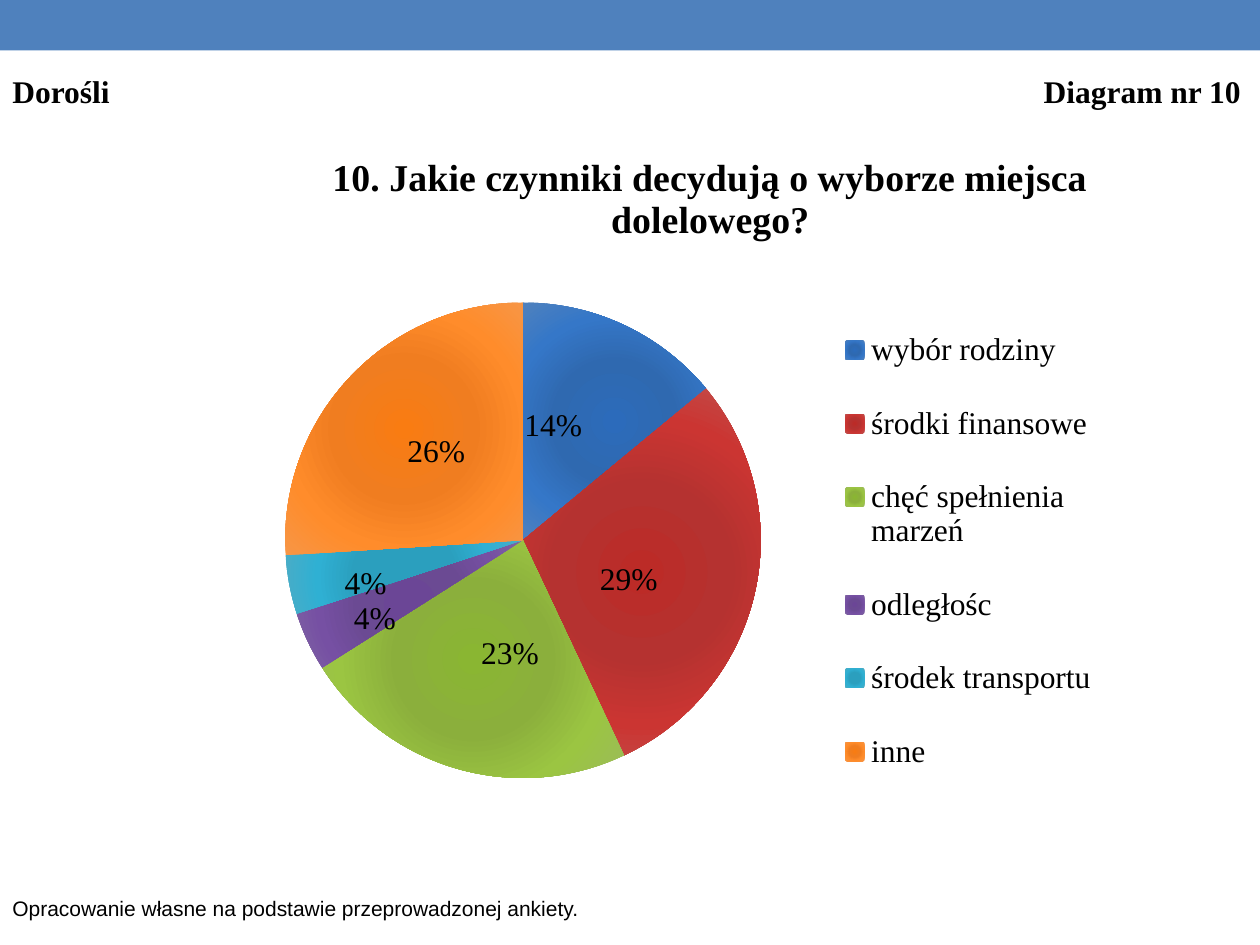
import pptx
import pptx.chart.data
import pptx.dml.color
import pptx.enum.chart
import pptx.enum.shapes
import pptx.oxml
import pptx.oxml.ns
import pptx.util
from pptx.util import Inches, Pt

SERIF, SANS = "Times New Roman", "Arial"
BAR_COLOR, TEXT_COLOR = "4F81BD", "000000"
HEADER = "Dorośli\tDiagram nr 10"
FOOTER = "Opracowanie własne na podstawie przeprowadzonej ankiety."
QUESTION = "10. Jakie czynniki decydują o wyborze miejsca dolelowego?"

# answer, percent, gradient from centre to rim, label shift (share of chart size)
ANSWERS = [
    ("wybór rodziny", 14, ("2C6BBB", "2F69B0", "3577C8", "4F81BD"), (-0.02, -0.01)),
    ("środki finansowe", 29, ("BC2B27", "B53230", "CB3532", "C0504D"), (-0.01, 0.02)),
    ("chęć spełnienia marzeń", 23, ("8AB632", "8BAF3C", "9BC542", "9BBB59"), (0.02, 0)),
    ("odległośc", 4, ("6B4696", "6B4A93", "7650A3", "8064A2"), (-0.04, 0.04)),
    ("środek transportu", 4, ("2AA0BE", "2B9FBE", "2FB0D3", "4BACC6"), (-0.04, 0.03)),
    ("inne", 26, ("F97C12", "F07D20", "FF8C2B", "F79646"), (0, -0.01)),
]
STOPS = (0, 40, 70, 100)
CHART_BOX = (1.3, 0.99, 8.03, 5.59)
PIE_BOX = (2.27, 2.37, 3.78, 3.78)
LEGEND_BOX = (6.6, 2.33, 2.2, 4.07)
TITLE_CORNER = (2.6, 1.16)


def color(code):
    return pptx.dml.color.RGBColor.from_string(code)


def set_font(font, name, size, bold=False):
    font.name, font.size, font.bold = name, Pt(size), bold
    font.color.rgb = color(TEXT_COLOR)


def add_text(slide, box, text, name, size, bold=False, right_tab=None):
    frame = slide.shapes.add_textbox(*map(Inches, box)).text_frame
    frame.word_wrap = True
    para = frame.paragraphs[0]
    para.text = text
    if right_tab:
        para._p.get_or_add_pPr().append(pptx.oxml.parse_xml(
            f'<a:tabLst {pptx.oxml.ns.nsdecls("a")}>'
            f'<a:tab pos="{Inches(right_tab)}" algn="r"/></a:tabLst>'))
    for span in para.runs:
        set_font(span.font, name, size, bold)


def layout_xml(values, edge=False, inner=False):
    """Manual layout from x, y and, if given, width and height shares."""
    parts = '<c:layoutTarget val="inner"/>' if inner else ""
    if edge:
        parts += '<c:xMode val="edge"/><c:yMode val="edge"/>'
    parts += "".join(f'<c:{key} val="{value:.2f}"/>' for key, value in zip("xywh", values))
    return pptx.oxml.parse_xml(
        f'<c:layout {pptx.oxml.ns.nsdecls("c")}><c:manualLayout>{parts}'
        "</c:manualLayout></c:layout>")


def place(parent, before, box, inner=False):
    """Put a part of the chart at a slide position, after the child named before."""
    left, top, width, height = CHART_BOX
    shares = [(box[0] - left) / width, (box[1] - top) / height]
    if len(box) == 4:
        shares += [box[2] / width, box[3] / height]
    for old in parent.xpath("./c:layout"):
        parent.remove(old)
    layout = layout_xml(shares, edge=True, inner=inner)
    if before:
        parent.xpath(f"./{before}")[-1].addnext(layout)
    else:
        parent.insert(0, layout)


def radial_fill(codes):
    stops = "".join(f'<a:gs pos="{stop * 1000}"><a:srgbClr val="{code}"/></a:gs>'
                    for stop, code in zip(STOPS, codes))
    return pptx.oxml.parse_xml(
        f'<a:gradFill {pptx.oxml.ns.nsdecls("a")} rotWithShape="1"><a:gsLst>{stops}</a:gsLst>'
        '<a:path path="circle"><a:fillToRect l="50000" t="50000" r="50000" b="50000"/>'
        "</a:path></a:gradFill>")


def add_pie(slide):
    data = pptx.chart.data.CategoryChartData(number_format='0"%"')
    data.categories = [answer[0] for answer in ANSWERS]
    data.add_series("Series 1", [answer[1] for answer in ANSWERS])
    chart = slide.shapes.add_chart(
        pptx.enum.chart.XL_CHART_TYPE.PIE, *map(Inches, CHART_BOX), data).chart
    set_font(chart.font, SANS, 18)

    chart.has_title = True
    chart.chart_title.text_frame.text = QUESTION
    set_font(chart.chart_title.text_frame.paragraphs[0].runs[0].font, SERIF, 21.6, True)
    chart.has_legend = True
    chart.legend.position = pptx.enum.chart.XL_LEGEND_POSITION.RIGHT
    chart.legend.include_in_layout = False
    set_font(chart.legend.font, SERIF, 18)

    plot = chart.plots[0]
    plot.vary_by_categories = True
    series = plot.series[0]
    labels = series.data_labels
    labels.show_value = True
    labels.number_format, labels.number_format_is_linked = '0"%"', False
    labels.position = pptx.enum.chart.XL_LABEL_POSITION.CENTER
    set_font(labels.font, SERIF, 18)

    for index, (_, _, codes, shift) in enumerate(ANSWERS):
        point = series.points[index]
        point.format.fill.background()
        empty_fill = chart.element.xpath(".//c:dPt/c:spPr/a:noFill")[0]
        empty_fill.getparent().replace(empty_fill, radial_fill(codes))
        set_font(point.data_label.font, SERIF, 18)
        point.data_label.position = pptx.enum.chart.XL_LABEL_POSITION.CENTER
        label = chart.element.xpath(f'.//c:dLbl[c:idx/@val="{index}"]')[0]
        label.xpath("./c:idx")[0].addnext(layout_xml(shift))

    root = chart.element
    place(root.xpath(".//c:plotArea")[0], None, PIE_BOX, inner=True)
    place(root.xpath(".//c:legend")[0], "c:legendPos", LEGEND_BOX)
    place(root.xpath(".//c:chart/c:title")[0], "c:tx", TITLE_CORNER)


def main():
    deck = pptx.Presentation()
    deck.slide_width, deck.slide_height = Inches(10), Inches(7.5)
    slide = deck.slides.add_slide(deck.slide_layouts[6])
    bar = slide.shapes.add_shape(
        pptx.enum.shapes.MSO_SHAPE.RECTANGLE, 0, 0, deck.slide_width, Inches(0.4))
    bar.shadow.inherit = False
    bar.fill.solid()
    bar.fill.fore_color.rgb = color(BAR_COLOR)
    bar.line.fill.background()
    add_pie(slide)
    add_text(slide, (0, 0.52, 10, 0.4), HEADER, SERIF, 18, True, right_tab=9.75)
    add_text(slide, (0, 7.06, 6.14, 0.3), FOOTER, SANS, 12)
    deck.save("out.pptx")


if __name__ == "__main__":
    main()
